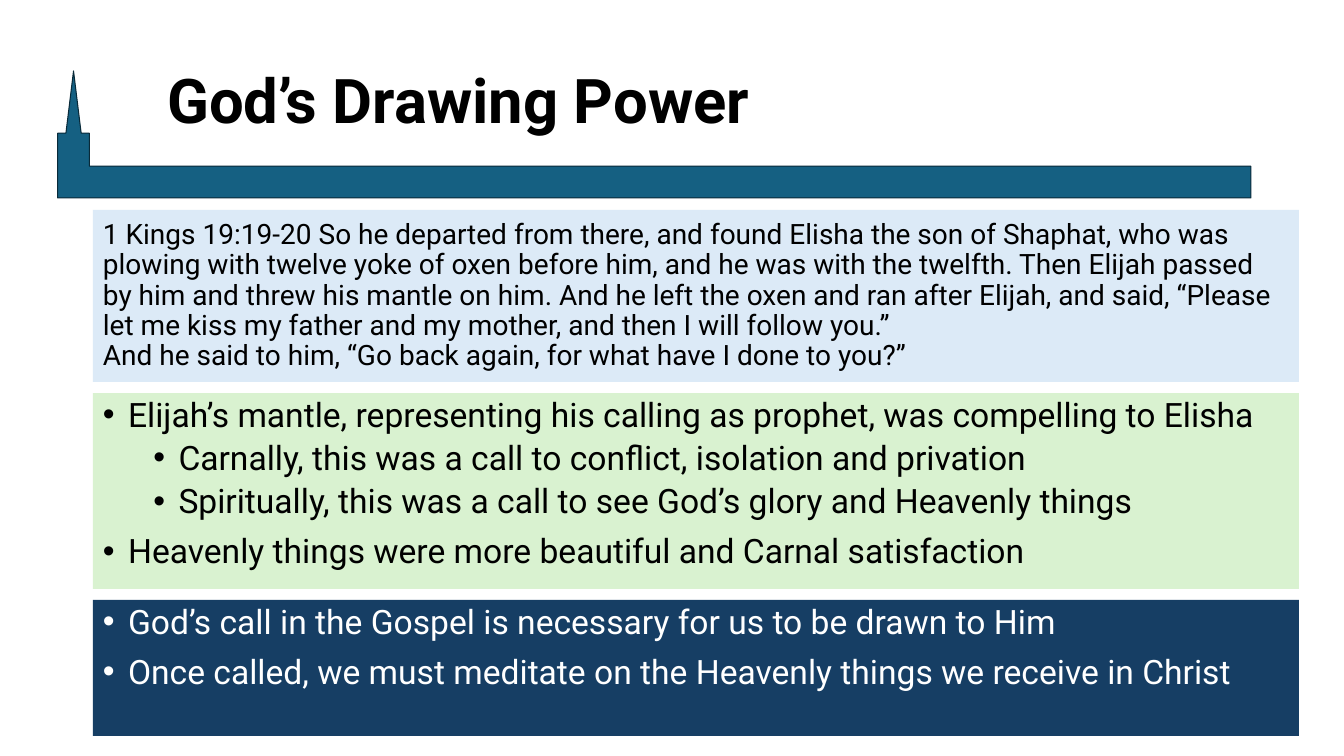
from lxml.etree import SubElement
from pptx import Presentation
from pptx.dml.color import RGBColor
from pptx.enum.shapes import MSO_SHAPE
from pptx.enum.text import MSO_ANCHOR, MSO_AUTO_SIZE, PP_ALIGN
from pptx.oxml.ns import qn
from pptx.util import Emu, Pt

COLORS = {
    "black": "000000",
    "white": "FFFFFF",
    "teal": "156082",
    "teal_line": "092A39",
    "pale_blue": "DCEAF7",
    "pale_green": "D9F2D0",
    "navy": "163E64",
}
FONT = "Roboto"


def px(value):
    return Emu(round(value * 914400 / 100.8))


def format_paragraph(paragraph, size, color, bold=False):
    paragraph.alignment = PP_ALIGN.LEFT
    paragraph.line_spacing = 0.9
    for run in paragraph.runs:
        run.font.name = FONT
        run.font.size = Pt(size)
        run.font.bold = bold
        run.font.color.rgb = RGBColor.from_string(COLORS[color])


presentation = Presentation()
presentation.slide_width = px(1344)
presentation.slide_height = px(756)
slide = presentation.slides.add_slide(presentation.slide_layouts[5])

steeple = slide.shapes.add_shape(MSO_SHAPE.BENT_UP_ARROW, px(66), px(71), px(1185), px(127))
steeple.shadow.inherit = False
steeple.fill.solid()
steeple.fill.fore_color.rgb = RGBColor.from_string(COLORS["teal"])
steeple.line.color.rgb = RGBColor.from_string(COLORS["teal_line"])
steeple.line.width = Pt(0.75)
for index, adjustment in enumerate([0.25, 0.06, 0.49]):
    steeple.adjustments[index] = adjustment
steeple.element.spPr.get_or_add_xfrm().set("flipH", "1")

title = slide.shapes.title
title.left, title.top, title.width, title.height = px(157), px(40), px(1095), px(127)
title.text_frame.text = "God’s Drawing Power"
title.text_frame.auto_size = MSO_AUTO_SIZE.NONE
title.text_frame.vertical_anchor = MSO_ANCHOR.MIDDLE
format_paragraph(title.text_frame.paragraphs[0], 44, "black", bold=True)

SCRIPTURE = (
    "1 Kings 19:19-20 So he departed from there, and found Elisha the son of Shaphat, "
    "who was plowing with twelve yoke of oxen before him, and he was with the twelfth. "
    "Then Elijah passed by him and threw his mantle on him. And he left the oxen and ran "
    "after Elijah, and said, “Please let me kiss my father and my mother, and then I will "
    "follow you.”\nAnd he said to him, “Go back again, for what have I done to you?”"
)
MANTLE_POINTS = [
    (0, "Elijah’s mantle, representing his calling as prophet, was compelling to Elisha"),
    (1, "Carnally, this was a call to conflict, isolation and privation"),
    (1, "Spiritually, this was a call to see God’s glory and Heavenly things"),
    (0, "Heavenly things were more beautiful and Carnal satisfaction"),
]
GOSPEL_POINTS = [
    (0, "God’s call in the Gospel is necessary for us to be drawn to Him"),
    (0, "Once called, we must meditate on the Heavenly things we receive in Christ"),
]
PANELS = [
    (172, "pale_blue", "black", 20, MSO_ANCHOR.MIDDLE, False, [(0, SCRIPTURE)]),
    (196, "pale_green", "black", 24, MSO_ANCHOR.TOP, True, MANTLE_POINTS),
    (136, "navy", "white", 24, MSO_ANCHOR.TOP, True, GOSPEL_POINTS),
]
PANEL_GAP = 11
INDENT = Pt(18)

top = 210
for height, fill, color, size, anchor, bulleted, points in PANELS:
    panel = slide.shapes.add_shape(MSO_SHAPE.RECTANGLE, px(93), px(top), px(1206), px(height))
    panel.shadow.inherit = False
    panel.fill.solid()
    panel.fill.fore_color.rgb = RGBColor.from_string(COLORS[fill])
    panel.line.fill.background()
    frame = panel.text_frame
    frame.word_wrap = True
    frame.vertical_anchor = anchor
    for index, (level, text) in enumerate(points):
        paragraph = frame.add_paragraph() if index else frame.paragraphs[0]
        paragraph.text = text
        paragraph.level = level
        if index:
            paragraph.space_before = Pt(5 if level else 10)
        if bulleted:
            properties = paragraph._p.get_or_add_pPr()
            properties.set("marL", str(INDENT * (1 + 2 * level)))
            properties.set("indent", str(-INDENT))
            SubElement(properties, qn("a:buFont")).set("typeface", "Arial")
            SubElement(properties, qn("a:buChar")).set("char", "•")
        format_paragraph(paragraph, size, color)
    top += height + PANEL_GAP

presentation.save("out.pptx")
